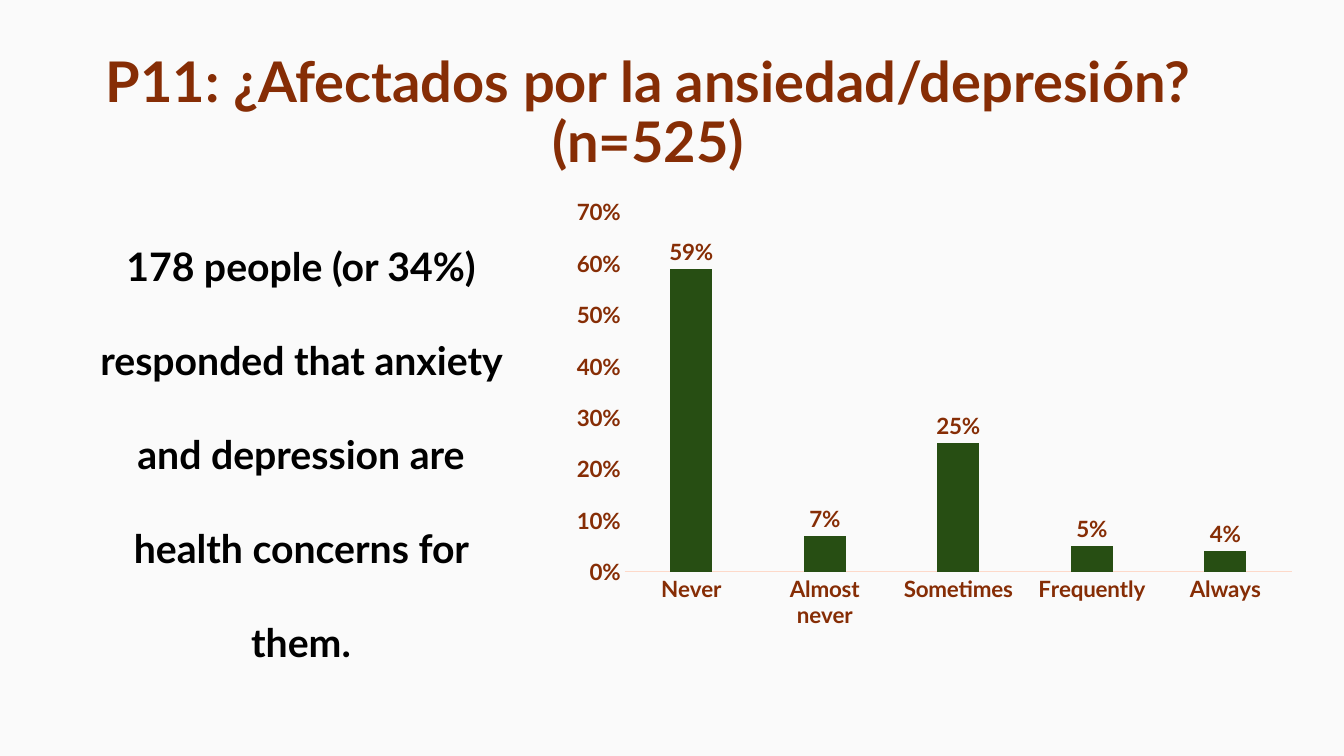
"""Build the slide on anxiety and depression answers with a column chart."""
from pptx import Presentation
from pptx.chart.data import CategoryChartData
from pptx.dml.color import RGBColor
from pptx.enum.chart import XL_CHART_TYPE as ChartType, XL_LABEL_POSITION as LabelPos
from pptx.enum.chart import XL_TICK_MARK as Tick
from pptx.enum.text import MSO_ANCHOR as Anchor, PP_ALIGN as Align
from pptx.util import Pt

TITLE = "P11: ¿Afectados por la ansiedad/depresión? (n=525)"
FINDING = "178 people (or 34%) responded that anxiety and depression are health concerns for them."
ANSWERS = {"Never": 0.59, "Almost never": 0.07, "Sometimes": 0.25, "Frequently": 0.05, "Always": 0.04}

TITLE_BOX = (32, 58, 1232, 122)
FINDING_BOX = (89, 190, 424, 546)
CHART_BOX = (562, 190, 745, 447)
RUST, GREEN, PEACH, BLACK, PAPER = "862D05", "274E13", "FDD9C9", "000000", "FAFAFA"
PX = 914400 / 100.8


def px(*lengths):
    return [round(length * PX) for length in lengths]


def color(code):
    return RGBColor.from_string(code)


def style(font, size, code):
    font.name, font.size, font.bold = "Lato", Pt(size), True
    font.color.rgb = color(code)


def add_text(slide, box, words, size, code, spacing, anchor, side):
    frame = slide.shapes.add_textbox(*px(*box)).text_frame
    frame.word_wrap = True
    frame.vertical_anchor = anchor
    frame.margin_left = frame.margin_right = px(side)[0]
    frame.text = words
    line = frame.paragraphs[0]
    line.alignment, line.line_spacing = Align.CENTER, spacing
    style(line.runs[0].font, size, code)


def add_answers(slide):
    answers = CategoryChartData(number_format="0%")
    answers.categories = list(ANSWERS)
    answers.add_series("Series 1", list(ANSWERS.values()))
    chart = slide.shapes.add_chart(ChartType.COLUMN_CLUSTERED, *px(*CHART_BOX), answers).chart
    chart.has_legend = chart.has_title = False
    chart.font.name, chart.font.size = "Arial", Pt(10)
    chart.font.color.rgb = color(RUST)

    for axis in (chart.category_axis, chart.value_axis):
        axis.major_tick_mark = axis.minor_tick_mark = Tick.NONE
        axis.has_major_gridlines = False
        style(axis.tick_labels.font, 16, RUST)
    chart.category_axis.format.line.color.rgb = color(PEACH)
    chart.category_axis.format.line.width = Pt(0.75)
    shares = chart.value_axis
    shares.format.line.fill.background()
    shares.minimum_scale, shares.maximum_scale, shares.major_unit = 0, 0.7, 0.1
    shares.tick_labels.number_format = "0%"
    shares.tick_labels.number_format_is_linked = False

    plot = chart.plots[0]
    plot.gap_width, plot.overlap, plot.vary_by_categories = 219, -27, False
    columns = plot.series[0]
    columns.format.fill.solid()
    columns.format.fill.fore_color.rgb = color(GREEN)
    labels = columns.data_labels
    labels.show_value, labels.position = True, LabelPos.OUTSIDE_END
    labels.number_format, labels.number_format_is_linked = "0%", False
    style(labels.font, 16, RUST)


def main():
    deck = Presentation()
    deck.slide_width, deck.slide_height = px(1344, 756)
    slide = deck.slides.add_slide(deck.slide_layouts[6])
    slide.background.fill.solid()
    slide.background.fill.fore_color.rgb = color(PAPER)
    add_text(slide, TITLE_BOX, TITLE, 40, RUST, 0.9, Anchor.BOTTOM, 0)
    add_text(slide, FINDING_BOX, FINDING, 28, BLACK, 2.0, Anchor.TOP, 10)
    add_answers(slide)
    deck.save("out.pptx")


if __name__ == "__main__":
    main()
